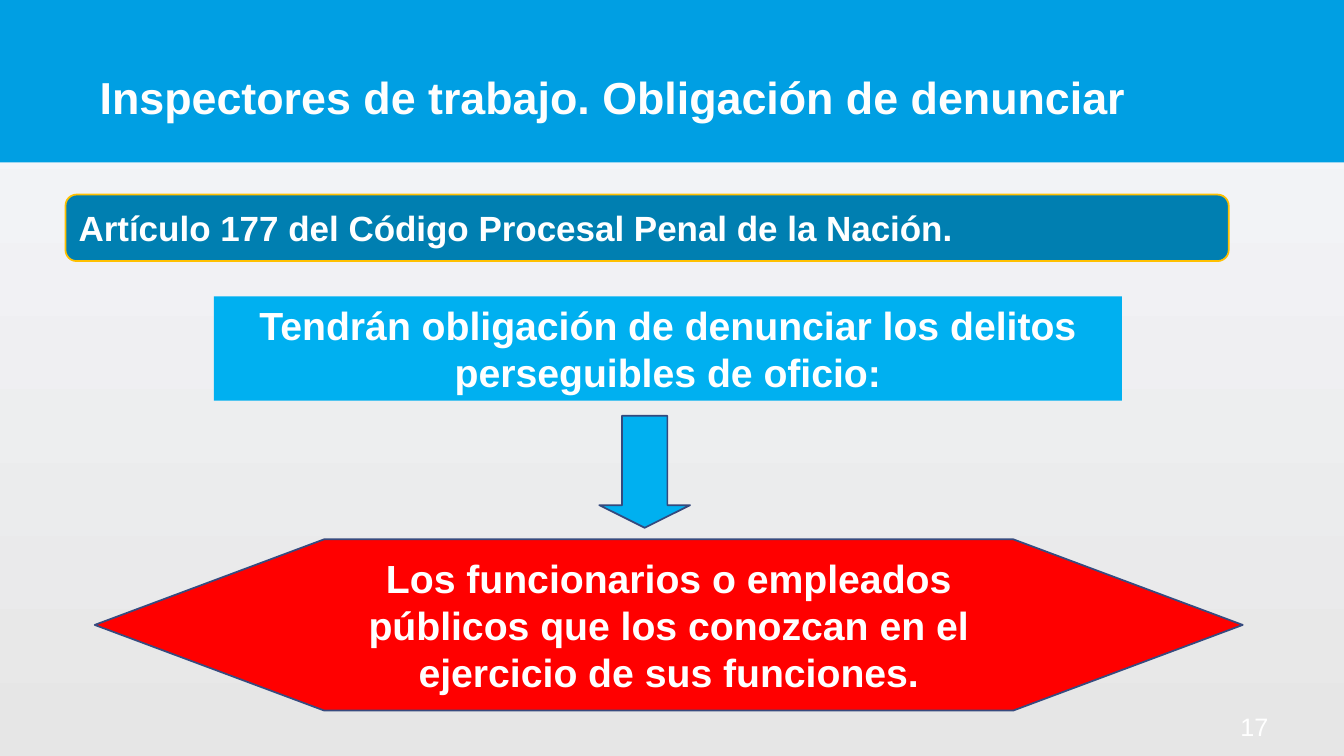
from pptx import Presentation
from pptx.dml.color import RGBColor
from pptx.enum.shapes import MSO_SHAPE as Kind
from pptx.enum.text import MSO_ANCHOR as Anchor, MSO_AUTO_SIZE as Fit, PP_ALIGN as Align
from pptx.util import Pt

WHITE = "FFFFFF"
CYAN = "00B0F0"


def paint(color, code):
    color.rgb = RGBColor.from_string(code)


class Deck:
    font = {"name": "Arial", "bold": True}

    def __init__(self, wide, high):
        self.prs = Presentation()
        self.prs.slide_width, self.prs.slide_height = Pt(wide), Pt(high)
        self.slide = self.prs.slides.add_slide(self.prs.slide_layouts[5])

    def back(self, stops, angle):
        fill = self.slide.background.fill
        fill.gradient()
        fill.gradient_angle = angle
        for stop, (place, code) in zip(fill.gradient_stops, stops):
            stop.position = place
            paint(stop.color, code)

    def place(self, shape, box):
        for side, size in zip(("left", "top", "width", "height"), box):
            setattr(shape, side, Pt(size))

    def letter(self, shape, text, size, align=Align.LEFT, color=WHITE, **extra):
        frame = shape.text_frame
        frame.text = text
        look = {"word_wrap": True, "auto_size": Fit.NONE, "vertical_anchor": Anchor.MIDDLE}
        for name, value in look.items():
            setattr(frame, name, value)
        par = frame.paragraphs[0]
        par.alignment = align
        font = par.runs[0].font
        for name, value in {**self.font, "size": Pt(size), **extra}.items():
            setattr(font, name, value)
        paint(font.color, color)

    def title(self, text, box, size, color):
        shape = self.slide.shapes.title
        self.place(shape, box)
        self.letter(shape, text, size, color=color)

    def label(self, text, box, size, **extra):
        shape = self.slide.shapes.add_textbox(*map(Pt, box))
        self.letter(shape, text, size, **extra)

    def block(self, kind, box, fill, line=None, tweaks=(), turn=0):
        shape = self.slide.shapes.add_shape(kind, *map(Pt, box))
        shape.shadow.inherit = False
        shape.rotation = turn
        for spot, value in enumerate(tweaks):
            shape.adjustments[spot] = value
        shape.fill.solid()
        paint(shape.fill.fore_color, fill)
        if line:
            paint(shape.line.color, line)
            shape.line.width = Pt(1.25)
        else:
            shape.line.fill.background()
        return shape

    def lower(self, shape):
        self.slide.shapes.element.insert(2, shape.element)


def main():
    deck = Deck(960, 540)
    deck.back([(0.03, "F6F7FB"), (1, "E6E6E6")], 270)

    band = deck.block(Kind.RECTANGLE, (0, 0, 960, 116), "009FE3")
    deck.lower(band)
    deck.title("Inspectores de trabajo. Obligación de denunciar",
               (64, 31, 832, 76), 32, "FEFEFE")

    staff = deck.block(Kind.FLOWCHART_PREPARATION, (67.7, 385.2, 820, 122.4),
                       "FF0000", "374B7F")
    deck.letter(staff, "Los funcionarios o empleados públicos que los conozcan "
                "en el ejercicio de sus funciones.", 28, Align.CENTER)

    duty = deck.block(Kind.RECTANGLE, (152.7, 211.7, 648.7, 74.5), CYAN)
    deck.letter(duty, "Tendrán obligación de denunciar los delitos "
                "perseguibles de oficio:", 28, Align.CENTER)

    law = deck.block(Kind.ROUNDED_RECTANGLE, (46.8, 139, 830.9, 47.5),
                     "007FB1", "FFC000", [0.167])
    deck.letter(law, "Artículo 177 del Código Procesal Penal de la Nación.", 25)

    deck.block(Kind.RIGHT_ARROW, (420.5, 304.6, 80, 64.8), CYAN, "34497D",
               [0.5, 0.249], 90)
    deck.label("17", (840, 505, 73.2, 28), 18, align=Align.RIGHT, bold=False)

    deck.prs.save("out.pptx")


if __name__ == "__main__":
    main()
